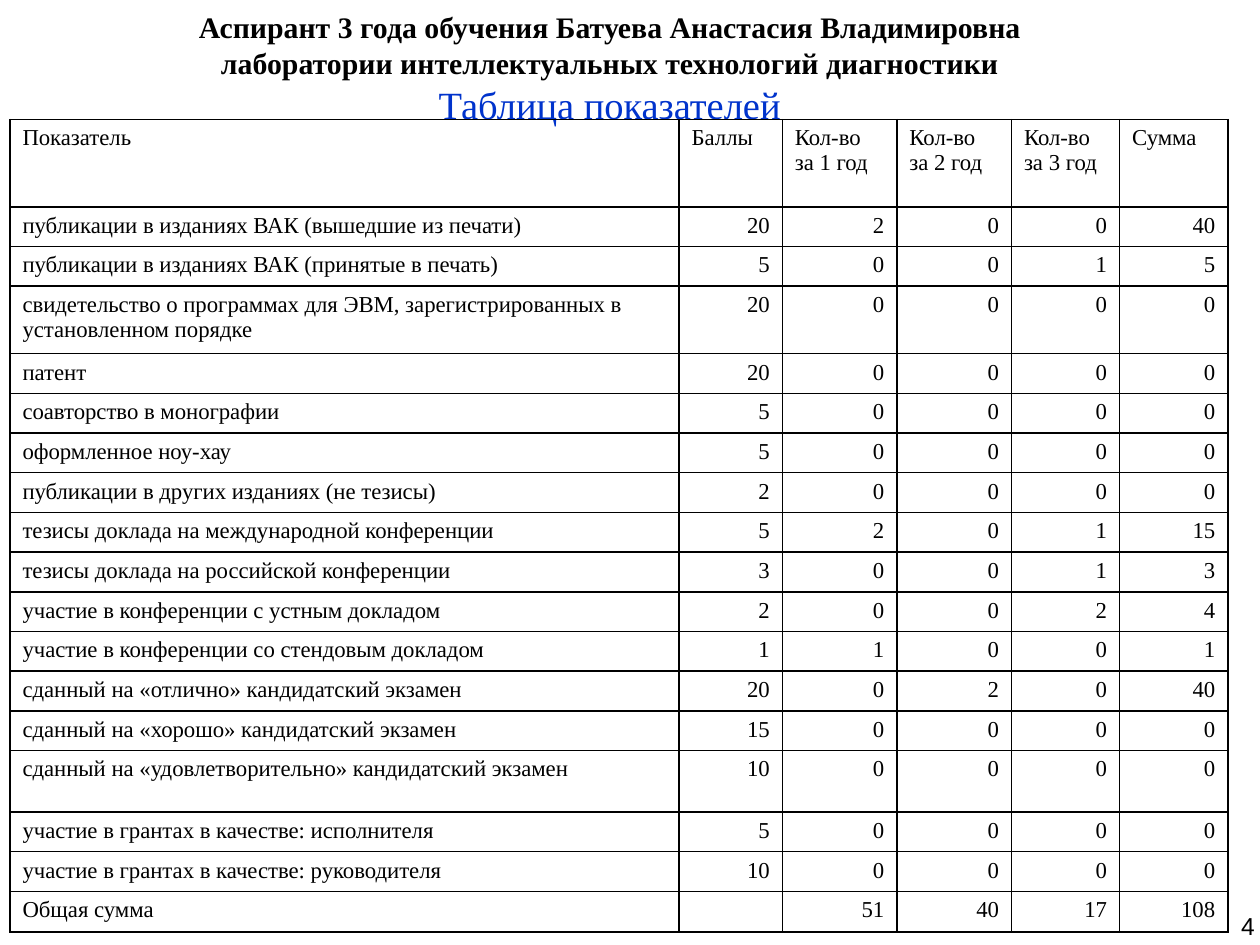
"""Build the slide with a postgraduate student's score table."""
from dataclasses import dataclass
from typing import NamedTuple

from lxml.etree import SubElement
from pptx import Presentation
from pptx.dml.color import RGBColor
from pptx.enum.text import MSO_ANCHOR, MSO_AUTO_SIZE, PP_ALIGN
from pptx.oxml.ns import qn
from pptx.util import Cm, Pt


@dataclass(frozen=True)
class TextStyle:
    """Type settings of a piece of text."""
    size: float
    color: str = "000000"
    font: str = "Times New Roman"
    bold: bool = False


@dataclass(frozen=True)
class Theme:
    """Colours and type sizes of the slide."""
    heading: TextStyle = TextStyle(17, bold=True)
    caption: TextStyle = TextStyle(22, color="0033CC")
    cell: TextStyle = TextStyle(13)
    number: TextStyle = TextStyle(14, font="Arial")
    border_color: str = "000000"
    border_width: float = 1


class Area(NamedTuple):
    """Position and size in centimetres."""
    left: float
    top: float
    width: float
    height: float


class Indicator(NamedTuple):
    """A scored activity with its counts for each year."""
    name: str
    points: int
    counts: tuple[int, int, int]
    height: float = 0.8

    def texts(self) -> list[str]:
        """Return the cell texts of the row."""
        return [self.name, *map(str, (self.points, *self.counts, self.points * sum(self.counts)))]


THEME = Theme()
HEADING = Area(1.5, 0, 21.59, 1.8)
CAPTION = Area(3.4, 1.5, 17.78, 0.91)
TABLE = Area(0.2, 2.41, 24.55, 16.4)
NUMBER = Area(24.77, 18.11, 1.04, 1.12)
COLUMN_WIDTHS = (13.49, 2.08, 2.31, 2.31, 2.18, 2.18)
HEADER_HEIGHT, TOTAL_HEIGHT = 1.76, 0.8
HEADER = ["Показатель", "Баллы", *(f"Кол-во за {year} год" for year in (1, 2, 3)), "Сумма"]
INDICATORS = (
    Indicator("публикации в изданиях ВАК (вышедшие из печати)", 20, (2, 0, 0)),
    Indicator("публикации в изданиях ВАК (принятые в печать)", 5, (0, 0, 1)),
    Indicator("свидетельство о программах для ЭВМ, зарегистрированных в установленном порядке",
              20, (0, 0, 0), 1.36),
    Indicator("патент", 20, (0, 0, 0)),
    Indicator("соавторство в монографии", 5, (0, 0, 0)),
    Indicator("оформленное ноу-хау", 5, (0, 0, 0)),
    Indicator("публикации в других изданиях (не тезисы)", 2, (0, 0, 0)),
    Indicator("тезисы доклада на международной конференции", 5, (2, 0, 1)),
    Indicator("тезисы доклада на российской конференции", 3, (0, 0, 1)),
    Indicator("участие в конференции с устным докладом", 2, (0, 0, 2)),
    Indicator("участие в конференции со стендовым докладом", 1, (1, 0, 0)),
    Indicator("сданный на «отлично» кандидатский экзамен", 20, (0, 2, 0)),
    Indicator("сданный на «хорошо» кандидатский экзамен", 15, (0, 0, 0)),
    Indicator("сданный на «удовлетворительно» кандидатский экзамен", 10, (0, 0, 0), 1.24),
    Indicator("участие в грантах в качестве: исполнителя", 5, (0, 0, 0)),
    Indicator("участие в грантах в качестве: руководителя", 10, (0, 0, 0)),
)


def lengths(area: Area) -> tuple[Cm, ...]:
    """Convert an area to slide lengths."""
    return tuple(Cm(value) for value in area)


def add_span(para, text: str, style: TextStyle) -> None:
    """Add one formatted run to a paragraph."""
    span = para.add_run()
    span.text = text
    span.font.size = Pt(style.size)
    span.font.name = style.font
    span.font.bold = style.bold
    span.font.color.rgb = RGBColor.from_string(style.color)


def fill_placeholder(box, area: Area, lines: list[str], style: TextStyle, anchor: MSO_ANCHOR) -> None:
    """Move a placeholder and write centred lines in it."""
    box.left, box.top, box.width, box.height = lengths(area)
    frame = box.text_frame
    frame.word_wrap = True
    frame.auto_size = MSO_AUTO_SIZE.NONE
    frame.vertical_anchor = anchor
    para = frame.paragraphs[0]
    para.alignment = PP_ALIGN.CENTER
    para.space_before = Pt(0)
    properties = para._p.get_or_add_pPr()
    properties.set("marL", "0")
    properties.set("indent", "0")
    SubElement(properties, qn("a:buNone"))
    for index, line in enumerate(lines):
        if index:
            para.add_line_break()
        add_span(para, line, style)


def draw_borders(cell) -> None:
    """Outline all four sides of a cell."""
    properties = cell._tc.get_or_add_tcPr()
    for side in ("lnL", "lnR", "lnT", "lnB"):
        line = SubElement(properties, qn(f"a:{side}"), w=str(Pt(THEME.border_width)))
        paint = SubElement(line, qn("a:solidFill"))
        SubElement(paint, qn("a:srgbClr"), val=THEME.border_color)


def fill_cell(cell, text: str, alignment: PP_ALIGN) -> None:
    """Write and outline one table cell."""
    draw_borders(cell)
    cell.fill.background()
    para = cell.text_frame.paragraphs[0]
    para.alignment = alignment
    if text:
        add_span(para, text, THEME.cell)
    else:
        SubElement(para._p, qn("a:endParaRPr"), sz=str(THEME.cell.size * 100))


def total_texts() -> list[str]:
    """Return the cell texts of the closing row."""
    totals = [sum(item.points * item.counts[year] for item in INDICATORS) for year in range(3)]
    return ["Общая сумма", "", *map(str, (*totals, sum(totals)))]


def add_score_table(page) -> None:
    """Add the table of indicators with computed sums."""
    rows = [HEADER, *(item.texts() for item in INDICATORS), total_texts()]
    heights = [HEADER_HEIGHT, *(item.height for item in INDICATORS), TOTAL_HEIGHT]
    table = page.shapes.add_table(len(rows), len(HEADER), *lengths(TABLE)).table
    table.first_row = table.horz_banding = False
    for column, width in zip(table.columns, COLUMN_WIDTHS):
        column.width = Cm(width)
    for row_index, (texts, height) in enumerate(zip(rows, heights)):
        table.rows[row_index].height = Cm(height)
        for column_index, text in enumerate(texts):
            numeric = row_index > 0 and column_index > 0
            alignment = PP_ALIGN.RIGHT if numeric else PP_ALIGN.LEFT
            fill_cell(table.cell(row_index, column_index), text, alignment)


def add_page_number(page, number: str) -> None:
    """Add the page number in the lower right corner."""
    frame = page.shapes.add_textbox(*lengths(NUMBER)).text_frame
    frame.word_wrap = True
    frame.auto_size = MSO_AUTO_SIZE.SHAPE_TO_FIT_TEXT
    frame.margin_left = frame.margin_top = frame.margin_right = frame.margin_bottom = Cm(0.25)
    add_span(frame.paragraphs[0], number, THEME.number)


def main() -> None:
    """Build and save the deck."""
    deck = Presentation()
    deck.slide_width, deck.slide_height = Cm(25.4), Cm(19.05)
    page = deck.slides.add_slide(deck.slide_layouts[1])
    heading = ["Аспирант 3 года обучения Батуева Анастасия Владимировна",
               "лаборатории интеллектуальных технологий диагностики"]
    fill_placeholder(page.shapes.title, HEADING, heading, THEME.heading, MSO_ANCHOR.MIDDLE)
    fill_placeholder(page.placeholders[1], CAPTION, ["Таблица показателей"], THEME.caption, MSO_ANCHOR.TOP)
    add_score_table(page)
    add_page_number(page, "4")
    deck.save("out.pptx")


if __name__ == "__main__":
    main()
